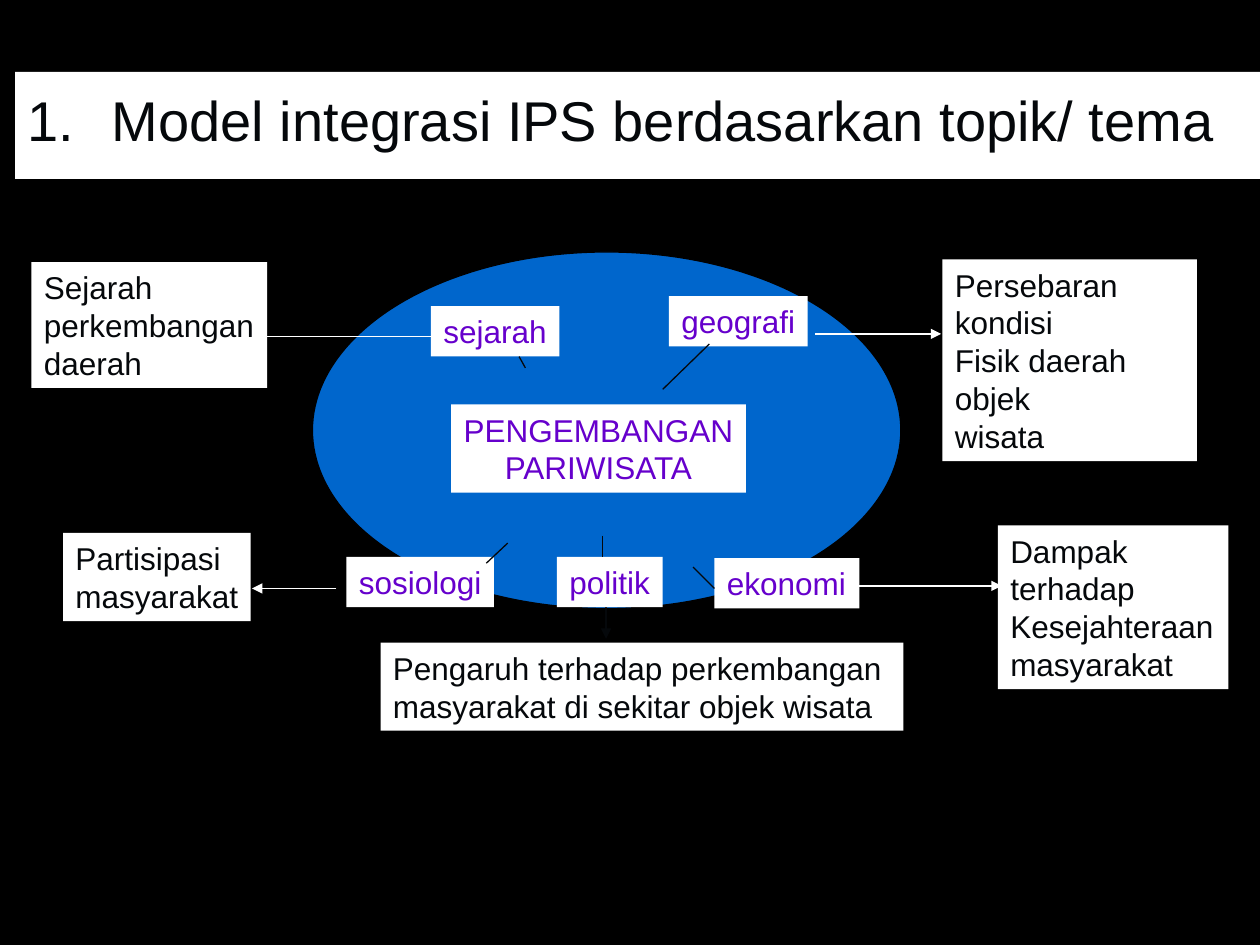
from lxml import etree
from pptx import Presentation
from pptx import util as u
from pptx.dml.color import RGBColor
from pptx.enum import shapes, text
from pptx.oxml import ns

BLACK = RGBColor(0, 0, 0)
WHITE = RGBColor(255, 255, 255)
INK = RGBColor(0x05, 0x08, 0x0B)
BLUE = RGBColor(0x00, 0x66, 0xCC)
VIOLET = RGBColor(0x66, 0x00, 0xCC)
COLS, ROWS = 10, 7.5
CELL = u.Inches(1)

TAGS = [
    ("geografi", 5.06, 0.35, 1.1),
    ("ekonomi", 5.42, 2.43, 1.15),
    ("sejarah", 3.17, 0.43, 1.02),
    ("politik", 4.17, 2.42, 0.84),
    ("sosiologi", 2.5, 2.42, 1.17),
]
NOTES = [
    ("Persebaran kondisi\nFisik daerah objek\nwisata", 7.23, 0.06, 2.02, 1.6, True),
    ("Dampak terhadap\nKesejahteraan\nmasyarakat", 7.67, 2.17, 1.83, 1.3, True),
    ("Pengaruh terhadap perkembangan\nmasyarakat di sekitar objek wisata",
     2.77, 3.1, 4.15, 0.7, False),
    ("Partisipasi\nmasyarakat", 0.25, 2.23, 1.49, 0.7, False),
    ("Sejarah\nperkembangan\ndaerah", 0, 0.08, 1.87, 1, False),
]
ARROWS = [
    (6.22, 0.65, 7.22, 0.65, WHITE),
    (6.53, 2.65, 7.7, 2.65, WHITE),
    (3.17, 0.67, 1.75, 0.67, WHITE),
    (2.42, 2.67, 1.75, 2.67, WHITE),
    (4.56, 2.82, 4.56, 3.07, INK),
]
LINKS = [
    (5.25, 2.5, 5.42, 2.67),
    (5.01, 1.09, 5.38, 0.73),
    (3.92, 0.92, 3.87, 0.83),
    (4.53, 2.25, 4.53, 2.42),
    (3.78, 2.31, 3.61, 2.47),
]


def panel(slide, box, words, size, color, align=text.PP_ALIGN.LEFT, wrap=False):
    shape = slide.shapes.add_shape(
        shapes.MSO_SHAPE.RECTANGLE, *[round(v * CELL) for v in box])
    shape.shadow.inherit = False
    shape.fill.solid()
    shape.fill.fore_color.rgb = WHITE
    shape.line.fill.background()
    frame = shape.text_frame
    frame.word_wrap = wrap
    frame.vertical_anchor = text.MSO_ANCHOR.TOP
    frame.text = words
    for para in frame.paragraphs:
        para.alignment = align
        for run in para.runs:
            run.font.name = "Arial"
            run.font.size = u.Pt(size)
            run.font.color.rgb = color
    return frame


def line(slide, ends, color, head=False):
    link = slide.shapes.add_connector(
        shapes.MSO_CONNECTOR.STRAIGHT, *[round(v * CELL) for v in ends])
    link.line.color.rgb = color
    link.line.width = u.Pt(0.75)
    if head:
        tail = etree.SubElement(link.line._get_or_add_ln(), ns.qn("a:tailEnd"))
        tail.set("type", "triangle")
    etree.SubElement(link._element.spPr, ns.qn("a:effectLst"))


def heading(slide, box):
    frame = panel(slide, box, "Model integrasi IPS berdasarkan topik/ tema",
                  32, INK, wrap=True)
    frame.margin_top = u.Inches(0.11)
    props = frame.paragraphs[0]._p.get_or_add_pPr()
    props.set("marL", str(u.Inches(0.67)))
    props.set("indent", str(-u.Inches(0.67)))
    etree.SubElement(props, ns.qn("a:buFont")).set("typeface", "Arial")
    etree.SubElement(props, ns.qn("a:buAutoNum")).set("type", "arabicPeriod")


def diagram(slide, box):
    left, top = box

    def ends(x1, y1, x2, y2):
        return left + x1, top + y1, left + x2, top + y2

    oval = slide.shapes.add_shape(
        shapes.MSO_SHAPE.OVAL,
        *[round(v * CELL) for v in (left + 2.23, top, 4.67, 2.83)])
    oval.shadow.inherit = False
    oval.fill.solid()
    oval.fill.fore_color.rgb = BLUE
    oval.line.color.rgb = BLACK
    oval.line.width = u.Pt(0.75)

    for *pos, color in ARROWS:
        line(slide, ends(*pos), color, head=True)
    panel(slide, (left + 3.33, top + 1.21, 2.34, 0.7),
          "PENGEMBANGAN\nPARIWISATA", 18, VIOLET, text.PP_ALIGN.CENTER)
    for words, x, y, wide in TAGS:
        panel(slide, (left + x, top + y, wide, 0.4), words, 18, VIOLET)
    for pos in LINKS:
        line(slide, ends(*pos), INK)
    for words, x, y, wide, high, wrap in NOTES:
        panel(slide, (left + x, top + y, wide, high), words, 18, INK, wrap=wrap)


def main():
    deck = Presentation()
    deck.slide_width = round(COLS * CELL)
    deck.slide_height = round(ROWS * CELL)
    slide = deck.slides.add_slide(deck.slide_layouts[6])
    slide.background.fill.solid()
    slide.background.fill.fore_color.rgb = BLACK
    heading(slide, (0.12, 0.57, 10.04, 0.85))
    diagram(slide, (0.25, 2))
    deck.save("out.pptx")


if __name__ == "__main__":
    main()
